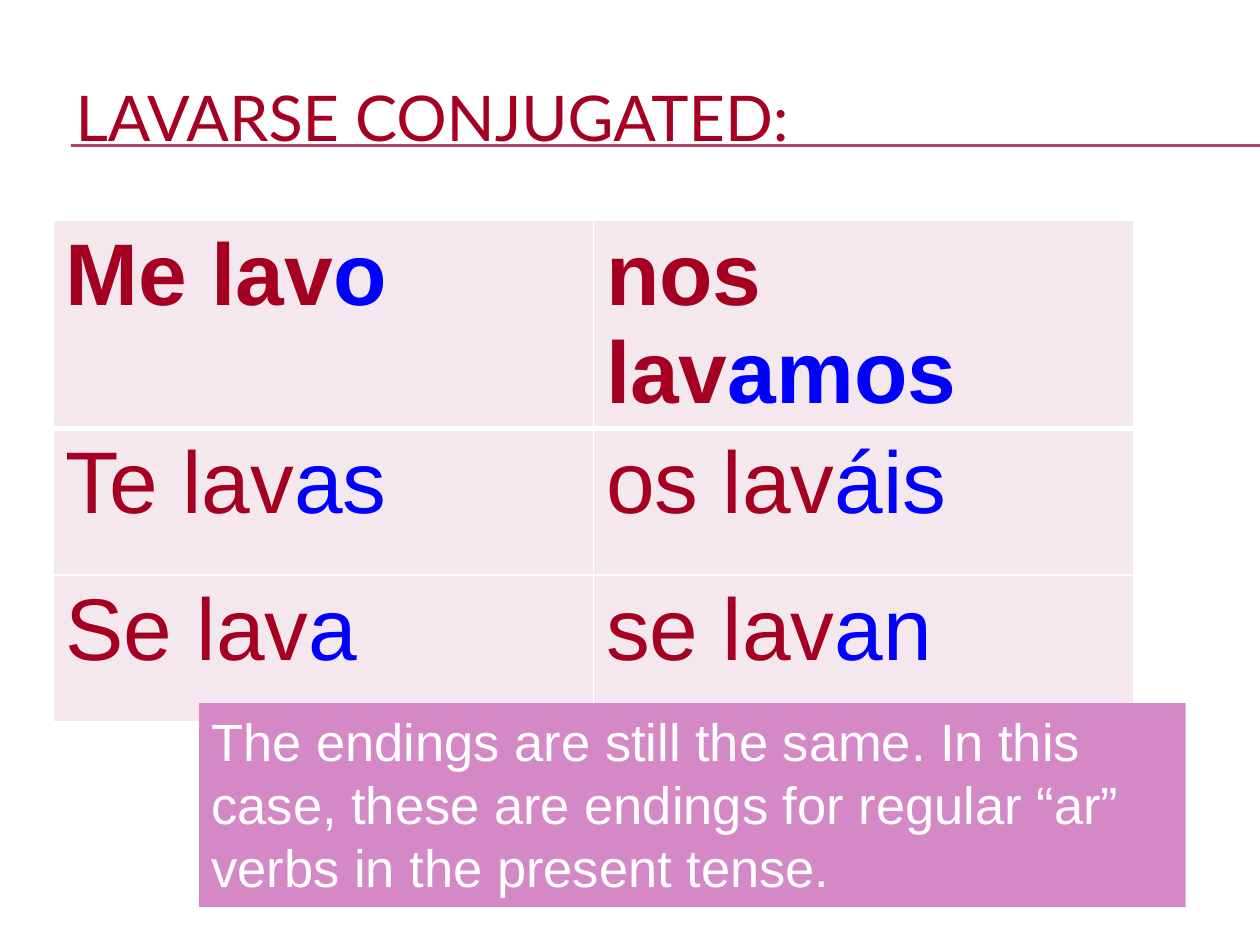
from lxml.etree import SubElement
from pptx import Presentation
from pptx.dml.color import RGBColor
from pptx.enum.shapes import MSO_CONNECTOR as Connector, MSO_SHAPE as Shape
from pptx.enum.text import MSO_ANCHOR as Anchor, PP_ALIGN as Align
from pptx.oxml.ns import qn
from pptx.util import Inches, Pt

COLORS = {
    "stem": "A50021",
    "ending": "0000FF",
    "rule": "B83D68",
    "cell": "F4E7ED",
    "note": "D488C5",
    "white": "FFFFFF",
}

presentation = Presentation()
presentation.slide_width = Inches(10)
presentation.slide_height = Inches(7.5)
slide = presentation.slides.add_slide(presentation.slide_layouts[5])
shapes = slide.shapes


def color(name):
    return RGBColor.from_string(COLORS[name])


def add_text(frame, text, size, fill, font="Arial", bold=False, anchor=Anchor.TOP):
    """Add a left-aligned run to the first paragraph of a text frame."""
    frame.word_wrap = True
    frame.vertical_anchor = anchor
    paragraph = frame.paragraphs[0]
    paragraph.alignment = Align.LEFT
    run = paragraph.add_run()
    run.text = text
    run.font.name = font
    run.font.size = Pt(size)
    run.font.bold = bold
    run.font.color.rgb = color(fill)


# Double rule under the title
for y in (1.15, 1.16):
    rule = shapes.add_connector(
        Connector.STRAIGHT, Inches(0.56), Inches(y), presentation.slide_width, Inches(y))
    rule.line.color.rgb = color("rule")
    rule.line.width = Pt(0.75)
    SubElement(rule.element.spPr, qn("a:effectLst"))

# Title, in front of the rule
title = shapes.title
title.left, title.top = Inches(0.5), Inches(0.3)
title.width, title.height = Inches(9), Inches(1.25)
add_text(title.text_frame, "LAVARSE CONJUGATED:", 36, "stem", font="Lato", anchor=Anchor.MIDDLE)
shapes.element.append(title.element)

# Conjugation table: each cell is a stem and its ending
conjugation = [
    [("Me lav", "o"), ("nos lav", "amos")],
    [("Te lav", "as"), ("os lav", "áis")],
    [("Se lav", "a"), ("se lav", "an")],
]
table = shapes.add_table(
    len(conjugation), 2, Inches(0.42), Inches(1.75), Inches(8.58), Inches(3.49)).table
for row_index, row in enumerate(conjugation):
    first = row_index == 0
    for column_index, (stem, ending) in enumerate(row):
        cell = table.cell(row_index, column_index)
        properties = cell._tc.get_or_add_tcPr()
        widths = {"L": 1, "R": 1, "T": 3 if row_index == 1 else 1, "B": 3 if first else 1}
        for side, width in widths.items():
            border = SubElement(properties, qn(f"a:ln{side}"), w=str(Pt(width)))
            border_fill = SubElement(border, qn("a:solidFill"))
            SubElement(border_fill, qn("a:srgbClr"), val=COLORS["white"])
        cell.fill.solid()
        cell.fill.fore_color.rgb = color("cell")
        for text, fill in ((stem, "stem"), (ending, "ending")):
            add_text(cell.text_frame, text, 50, fill, bold=first)

# Note about the endings
note = shapes.add_shape(
    Shape.RECTANGLE, Inches(1.58), Inches(5.58), Inches(7.83), Inches(1.62))
note.shadow.inherit = False
note.fill.solid()
note.fill.fore_color.rgb = color("note")
note.line.fill.background()
add_text(
    note.text_frame,
    "The endings are still the same. In this case, these are endings "
    "for regular “ar” verbs in the present tense.",
    30, "white")

presentation.save("out.pptx")
